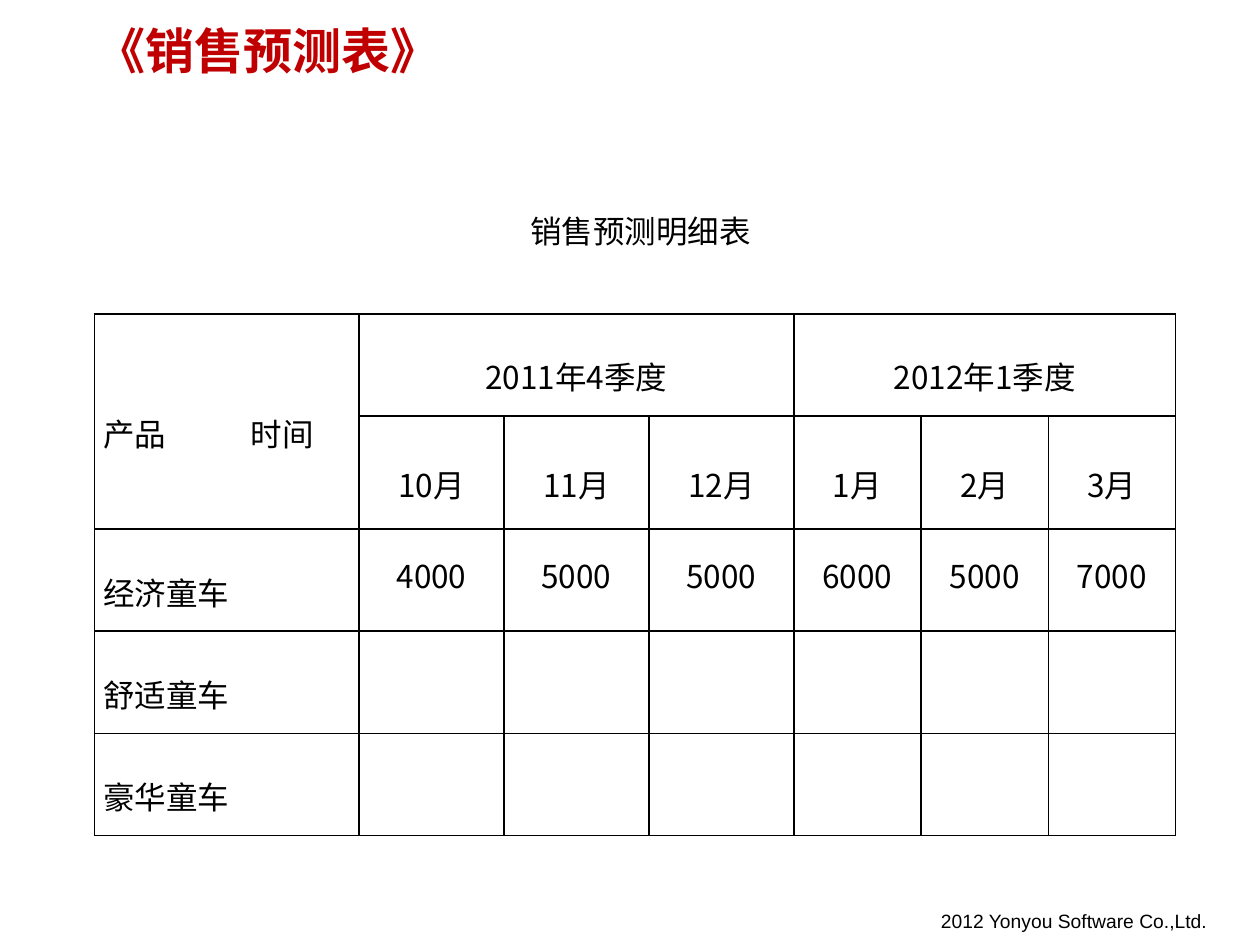
from lxml import etree
from pptx import Presentation
from pptx.dml.color import RGBColor
from pptx.enum.text import MSO_ANCHOR, PP_ALIGN
from pptx.oxml.ns import qn
from pptx.util import Inches, Pt

LEFT, CENTER = PP_ALIGN.LEFT, PP_ALIGN.CENTER
TOP, MIDDLE = MSO_ANCHOR.TOP, MSO_ANCHOR.MIDDLE
BLACK = RGBColor(0, 0, 0)
RED = RGBColor(0xC0, 0, 0)
SANS = "Noto Sans CJK SC"

MONTHS = ["10月", "11月", "12月", "1月", "2月", "3月"]
SALES = ["4000", "5000", "5000", "6000", "5000", "7000"]
ROWS = [
    ["产品\t时间", "2011年4季度", "", "", "2012年1季度", "", ""],
    [""] + MONTHS,
    ["经济童车"] + SALES,
    ["舒适童车"] + [""] * 6,
    ["豪华童车"] + [""] * 6,
]
WIDTHS = [2.1] + [1.15] * 3 + [1.01] * 3
HEIGHTS = [0.81, 0.9, 0.81, 0.81, 0.81]
SPANS = [(0, 0, 1, 0), (0, 1, 0, 3), (0, 4, 0, 6)]


def write(frame, text, size=18, font=SANS, color=BLACK, bold=False,
          align=LEFT, space=None, tab=None):
    para = frame.paragraphs[0]
    para.alignment = align
    if space:
        para.line_spacing = space
    if tab:
        props = para._p.get_or_add_pPr()
        stops = etree.SubElement(props, qn("a:tabLst"))
        etree.SubElement(stops, qn("a:tab"), pos=str(Inches(tab)), algn="l")
    run = para.add_run()
    run.text = text
    run.font.size = Pt(size)
    run.font.name = font
    run.font.bold = bold
    run.font.color.rgb = color
    east = etree.SubElement(run._r.get_or_add_rPr(), qn("a:ea"))
    east.set("typeface", SANS)


class Deck:
    def __init__(self, slide, line=BLACK, weight=1):
        self.slide = slide
        self.line = line
        self.weight = weight

    def label(self, text, x, y, w, h, wrap=True, anchor=TOP, **style):
        box = self.slide.shapes.add_textbox(
            Inches(x), Inches(y), Inches(w), Inches(h))
        frame = box.text_frame
        frame.word_wrap = wrap
        frame.vertical_anchor = anchor
        write(frame, text, **style)

    def border(self, cell):
        props = cell._tc.get_or_add_tcPr()
        for side in ("a:lnL", "a:lnR", "a:lnT", "a:lnB"):
            edge = etree.SubElement(props, qn(side), w=str(Pt(self.weight)))
            fill = etree.SubElement(edge, qn("a:solidFill"))
            etree.SubElement(fill, qn("a:srgbClr"), val=str(self.line))
        cell.fill.background()

    def table(self, rows, x, y, widths, heights, spans):
        table = self.slide.shapes.add_table(
            len(rows), len(widths), Inches(x), Inches(y),
            Inches(sum(widths)), Inches(sum(heights))).table
        table.first_row = table.horz_banding = False
        for col, width in zip(table.columns, widths):
            col.width = Inches(width)
        for row, height in zip(table.rows, heights):
            row.height = Inches(height)
        for top, left, low, right in spans:
            table.cell(top, left).merge(table.cell(low, right))
        for r, row in enumerate(rows):
            for c, text in enumerate(row):
                cell = table.cell(r, c)
                self.border(cell)
                cell.margin_left = cell.margin_right = Inches(0.07)
                cell.margin_top = cell.margin_bottom = 0
                cell.vertical_anchor = MIDDLE if r < 2 or c == 0 else TOP
                if text:
                    write(cell.text_frame, text, space=1.5,
                          align=CENTER if c else LEFT,
                          tab=1.17 if "\t" in text else None)


def main():
    show = Presentation()
    show.slide_width, show.slide_height = Inches(10), Inches(7.5)
    deck = Deck(show.slides.add_slide(show.slide_layouts[6]))
    deck.label("2012 Yonyou Software Co.,Ltd.", 7.37, 7.17, 2.33, 0.29,
               wrap=False, size=11, font="Arial")
    deck.table(ROWS, 0.75, 2.49, WIDTHS, HEIGHTS, SPANS)
    deck.label("《销售预测表》", 0.67, 0.08, 7.67, 0.64, anchor=MIDDLE,
               size=28, color=RED, bold=True)
    deck.label("销售预测明细表", 2.17, 1.63, 5.83, 0.4,
               font="Calibri", align=CENTER)
    show.save("out.pptx")


if __name__ == "__main__":
    main()
